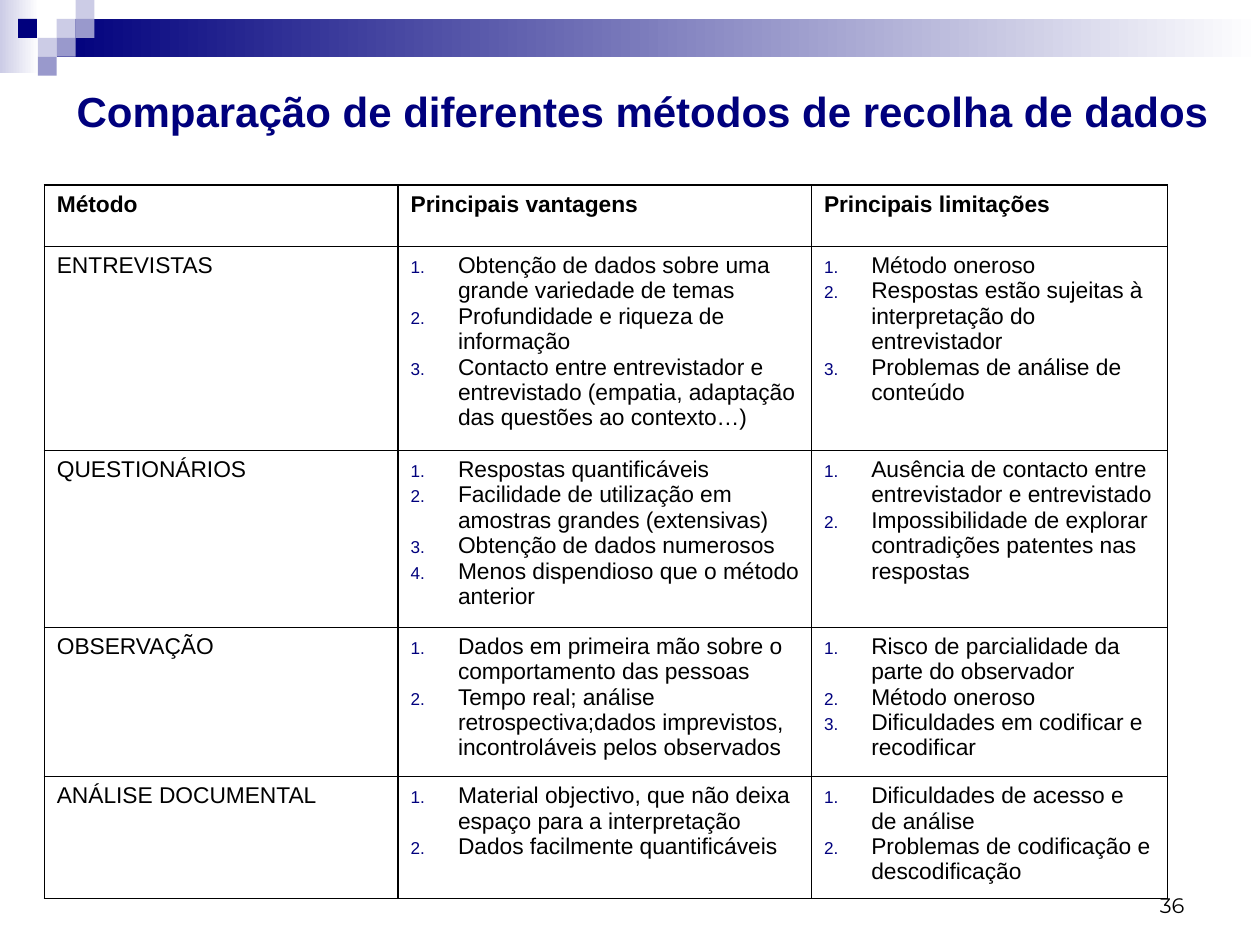
from lxml.etree import SubElement
from pptx import Presentation
from pptx.dml.color import RGBColor
from pptx.enum.shapes import MSO_SHAPE
from pptx.enum.text import MSO_ANCHOR, PP_ALIGN
from pptx.oxml.ns import qn
from pptx.util import Pt

NAVY = RGBColor(0x00, 0x00, 0x7D)
LILAC = RGBColor(0xCC, 0xCC, 0xE6)
VIOLET = RGBColor(0x99, 0x99, 0xCC)
WHITE = RGBColor(0xFF, 0xFF, 0xFF)
BLACK = RGBColor(0x00, 0x00, 0x00)

HEADERS = ["Método", "Principais vantagens", "Principais limitações"]
METHODS = [
    ("ENTREVISTAS",
     ["Obtenção de dados sobre uma grande variedade de temas",
      "Profundidade e riqueza de informação",
      "Contacto entre entrevistador e entrevistado (empatia, adaptação das questões ao contexto…)"],
     ["Método oneroso",
      "Respostas estão sujeitas à interpretação do entrevistador",
      "Problemas de análise de conteúdo"]),
    ("QUESTIONÁRIOS",
     ["Respostas quantificáveis",
      "Facilidade de utilização em amostras grandes (extensivas)",
      "Obtenção de dados numerosos",
      "Menos dispendioso que o método anterior"],
     ["Ausência de contacto entre entrevistador e entrevistado",
      "Impossibilidade de explorar contradições patentes nas respostas"]),
    ("OBSERVAÇÃO",
     ["Dados em primeira mão sobre o comportamento das pessoas",
      "Tempo real; análise retrospectiva;dados imprevistos, incontroláveis pelos observados"],
     ["Risco de parcialidade da parte do observador",
      "Método oneroso",
      "Dificuldades em codificar e recodificar"]),
    ("ANÁLISE DOCUMENTAL",
     ["Material objectivo, que não deixa espaço para a interpretação",
      "Dados facilmente quantificáveis"],
     ["Dificuldades de acesso e de análise",
      "Problemas de codificação e descodificação"]),
]
COLUMN_WIDTHS = [202.2, 236.2, 203.4]
ROW_HEIGHTS = [35.2, 116.5, 101, 85.1, 69.7]
TILE = 10.8


def add_block(page, left, top, width, height, *colors):
    block = page.shapes.add_shape(
        MSO_SHAPE.RECTANGLE, Pt(left), Pt(top), Pt(width), Pt(height))
    block.shadow.inherit = False
    block.line.fill.background()
    if len(colors) == 1:
        block.fill.solid()
        block.fill.fore_color.rgb = colors[0]
    else:
        block.fill.gradient()
        block.fill.gradient_angle = 0
        for stop, color in zip(block.fill.gradient_stops, colors):
            stop.color.rgb = color


def add_text(page, text, left, top, width, height, font_name, size, color):
    box = page.shapes.add_textbox(Pt(left), Pt(top), Pt(width), Pt(height))
    box.text_frame.word_wrap = True
    box.text_frame.text = text
    para = box.text_frame.paragraphs[0]
    font = para.runs[0].font
    font.name, font.size, font.color.rgb = font_name, Pt(size), color
    return box.text_frame, para


deck = Presentation()
deck.slide_width, deck.slide_height = Pt(720), Pt(540)
page = deck.slides.add_slide(deck.slide_layouts[6])

add_block(page, 0, 0, 22.3, 41.8, LILAC, WHITE)
add_block(page, 32.4, TILE, 687.6, 2 * TILE, NAVY, WHITE)
for left, row, color in [
    (32.4, 1, LILAC), (43.2, 0, LILAC), (43.2, 1, VIOLET), (21.6, 2, LILAC),
    (10.3, 1, NAVY), (32.4, 2, VIOLET), (21.6, 3, VIOLET),
]:
    add_block(page, left, row * TILE, TILE, TILE, color)

frame, para = add_text(page, "36", 516.2, 491.8, 167.8, 36, "Montserrat", 12, BLACK)
frame.vertical_anchor = MSO_ANCHOR.BOTTOM
para.alignment = PP_ALIGN.RIGHT

frame, para = add_text(page, "Comparação de diferentes métodos de recolha de dados",
                       36.7, 45.4, 667.4, 61, "Arial", 24, NAVY)
para.runs[0].font.bold = True

table = page.shapes.add_table(
    len(ROW_HEIGHTS), len(COLUMN_WIDTHS), Pt(25.3), Pt(105.8),
    Pt(sum(COLUMN_WIDTHS)), Pt(sum(ROW_HEIGHTS))).table
table.first_row = False
table.horz_banding = False
for column, width in zip(table.columns, COLUMN_WIDTHS):
    column.width = Pt(width)
for row, height in zip(table.rows, ROW_HEIGHTS):
    row.height = Pt(height)

for row_index, contents in enumerate([HEADERS, *METHODS]):
    for column_index, content in enumerate(contents):
        cell = table.cell(row_index, column_index)
        numbered = isinstance(content, list)
        cell.text_frame.text = "\n".join(content) if numbered else content
        for para in cell.text_frame.paragraphs:
            font = para.runs[0].font
            font.name, font.size, font.color.rgb = "Arial", Pt(13), BLACK
            font.bold = row_index == 0
            properties = para._p.get_or_add_pPr()
            properties.set("marL", str(Pt(27)))
            properties.set("indent", str(-Pt(27)))
            if numbered:
                bullet_color = SubElement(properties, qn("a:buClr"))
                SubElement(bullet_color, qn("a:srgbClr"), val=str(NAVY))
                SubElement(properties, qn("a:buSzPct"), val="75000")
                SubElement(properties, qn("a:buAutoNum"), type="arabicPeriod")
            else:
                SubElement(properties, qn("a:buNone"))

        cell_properties = cell._tc.get_or_add_tcPr()
        for side in ("a:lnL", "a:lnR", "a:lnT", "a:lnB"):
            border = SubElement(cell_properties, qn(side), w=str(Pt(1)))
            border_fill = SubElement(border, qn("a:solidFill"))
            SubElement(border_fill, qn("a:srgbClr"), val=str(BLACK))
        cell.fill.background()

deck.save("out.pptx")
